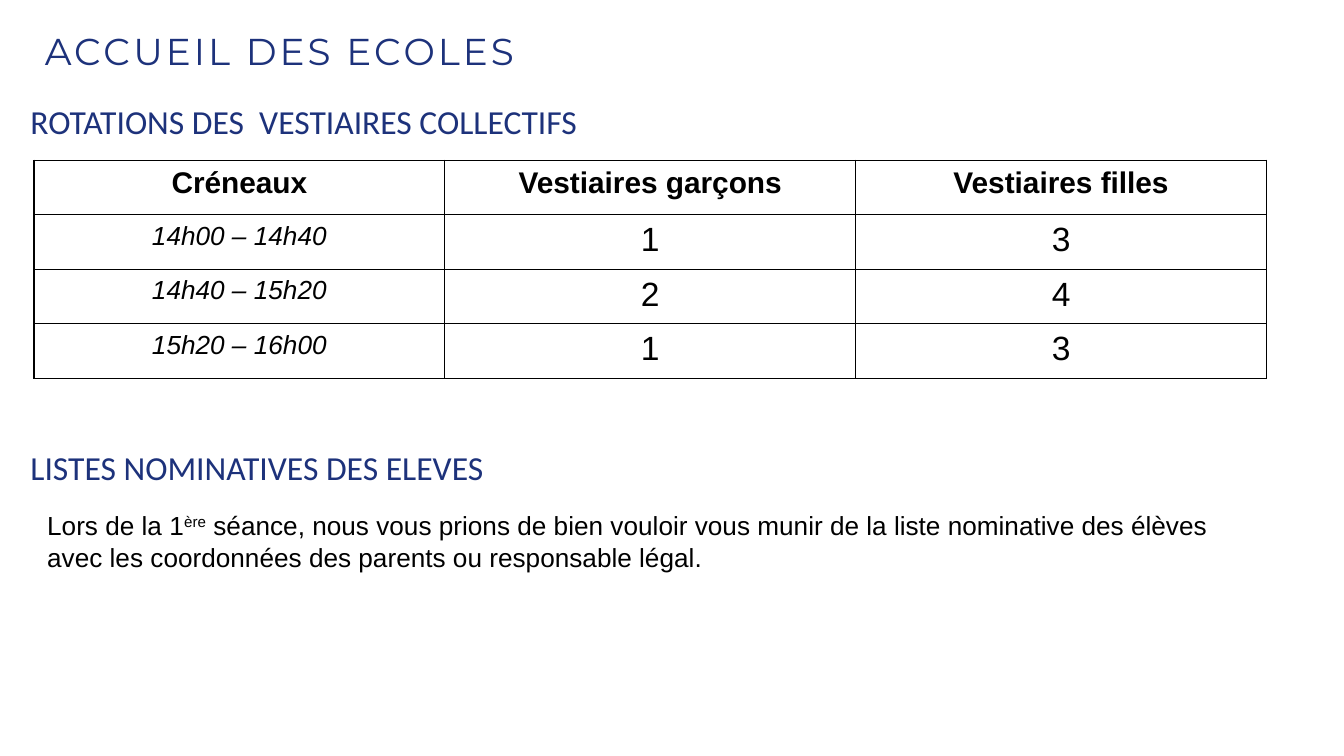
from lxml import etree
from pptx import Presentation
from pptx.dml.color import RGBColor
from pptx.enum import text as t
from pptx.oxml.ns import qn
from pptx.util import Pt

NAVY = RGBColor(0x1D, 0x32, 0x7B)
BLACK = RGBColor(0, 0, 0)

TITLE = dict(name="Montserrat", size=Pt(20), color=NAVY)
HEADING = dict(name="Calibri", size=Pt(18), color=NAVY)
BODY = dict(name="Arial", size=Pt(14), color=BLACK)
HEADER_CELL = dict(BODY, size=Pt(16), bold=True)
SLOT_CELL = dict(BODY, italic=True)
NUMBER_CELL = dict(BODY, size=Pt(18))

ROTATIONS = [
    ("Créneaux", "Vestiaires garçons", "Vestiaires filles"),
    ("14h00 – 14h40", "1", "3"),
    ("14h40 – 15h20", "2", "4"),
    ("15h20 – 16h00", "1", "3"),
]


def add_run(p, content, style, **attributes):
    """Add a run; attributes such as baseline or spc go on its properties."""
    r = p.add_run()
    r.text = content
    for key, value in style.items():
        if key == "color":
            r.font.color.rgb = value
        else:
            setattr(r.font, key, value)
    for key, value in attributes.items():
        r.font._element.set(key, str(value))


def add_text_box(s, box, **frame):
    tf = s.shapes.add_textbox(*map(Pt, box)).text_frame
    tf.word_wrap = True
    for key, value in frame.items():
        setattr(tf, key, value)
    return tf.paragraphs[0]


def add_title(s, box, content):
    p = add_text_box(s, box, margin_left=Pt(0.7), margin_top=Pt(1.4),
                     margin_right=0, margin_bottom=0)
    add_run(p, content, TITLE, spc=160)


def add_heading(s, box, content):
    add_run(add_text_box(s, box), content, HEADING)


def add_note(s, box):
    p = add_text_box(s, box)
    add_run(p, "Lors de la 1", BODY)
    add_run(p, "ère", BODY, baseline=30000)
    add_run(p, " séance, nous vous prions de bien vouloir vous munir de la liste "
               "nominative des élèves avec les coordonnées des parents ou "
               "responsable légal.", BODY)


def set_borders(cell):
    tcPr = cell._tc.get_or_add_tcPr()
    for side in ("a:lnL", "a:lnR", "a:lnT", "a:lnB"):
        ln = etree.SubElement(tcPr, qn(side), w=str(Pt(0.75)))
        fill = etree.SubElement(ln, qn("a:solidFill"))
        etree.SubElement(fill, qn("a:srgbClr"), val=str(BLACK))


def add_rotation_table(s, box, rows):
    table = s.shapes.add_table(len(rows), len(rows[0]), *map(Pt, box)).table
    table.horz_banding = False
    for i, row in enumerate(rows):
        for j, content in enumerate(row):
            cell = table.cell(i, j)
            set_borders(cell)
            cell.fill.background()
            p = cell.text_frame.paragraphs[0]
            p.alignment = t.PP_ALIGN.CENTER
            style = HEADER_CELL if i == 0 else SLOT_CELL if j == 0 else NUMBER_CELL
            add_run(p, content, style)


def main():
    prs = Presentation()
    prs.slide_width, prs.slide_height = Pt(720), Pt(405)
    s = prs.slides.add_slide(prs.slide_layouts[6])
    add_title(s, (23.3, 13.7, 655, 25.5), "ACCUEIL DES ECOLES")
    add_heading(s, (9.2, 50.5, 373, 29), "ROTATIONS DES  VESTIAIRES COLLECTIFS")
    add_rotation_table(s, (18.2, 85.8, 660.4, 116.8), ROTATIONS)
    add_heading(s, (9.2, 235.8, 328, 29), "LISTES NOMINATIVES DES ELEVES")
    add_note(s, (18.2, 269.5, 660.4, 58))
    prs.save("out.pptx")


if __name__ == "__main__":
    main()
